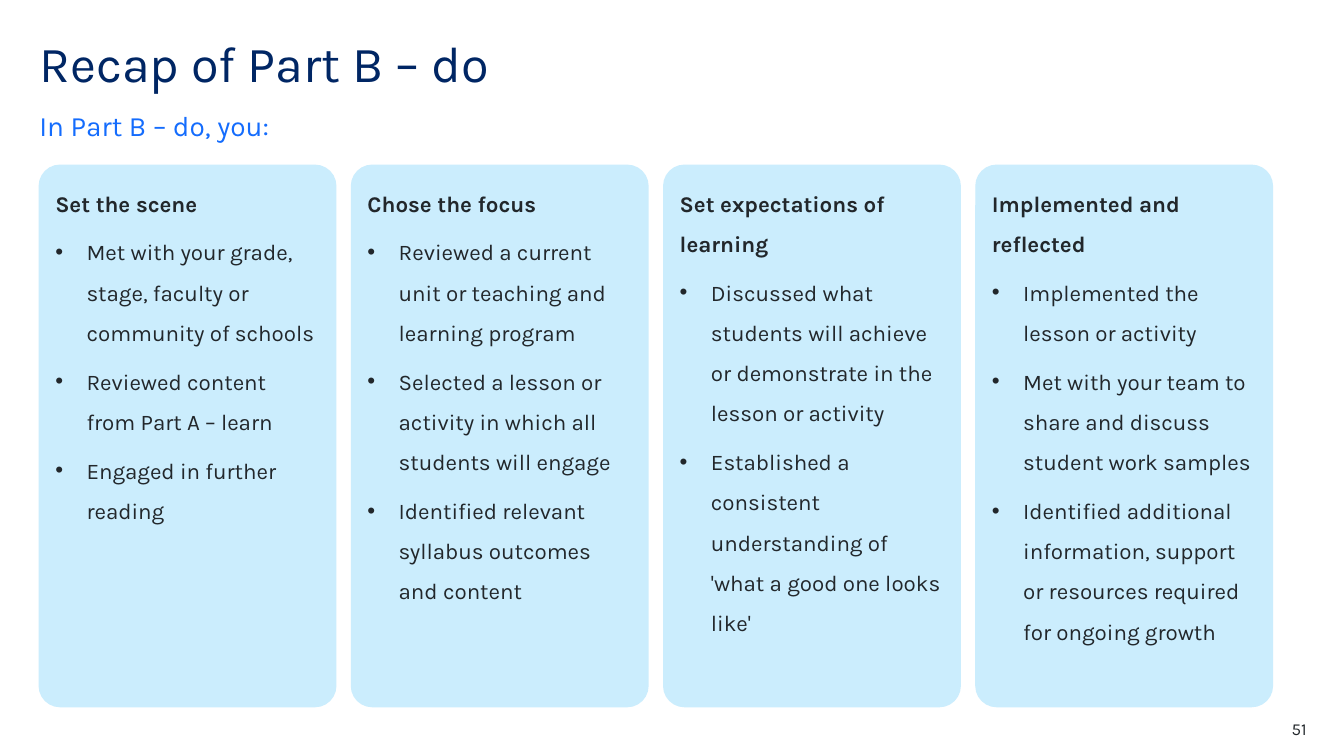
from dataclasses import dataclass

from lxml import etree
from pptx import Presentation
from pptx import util as u
from pptx.dml.color import RGBColor
from pptx.enum import shapes, text
from pptx.oxml import ns

# Content
HEADING = "Recap of Part B – do"
LEAD_IN = "In Part B – do, you:"
PAGE_NUMBER = "51"
STAGES = [
    ("Set the scene", [
        "Met with your grade, stage, faculty or community of schools",
        "Reviewed content from Part A – learn",
        "Engaged in further reading",
    ]),
    ("Chose the focus", [
        "Reviewed a current unit or teaching and learning program",
        "Selected a lesson or activity in which all students will engage",
        "Identified relevant syllabus outcomes and content",
    ]),
    ("Set expectations of learning", [
        "Discussed what students will achieve or demonstrate in the lesson or activity",
        "Established a consistent understanding of 'what a good one looks like'",
    ]),
    ("Implemented and reflected", [
        "Implemented the lesson or activity",
        "Met with your team to share and discuss student work samples",
        "Identified additional information, support or resources required for ongoing growth",
    ]),
]


@dataclass(frozen=True)
class Theme:
    font: str = "Karla"
    navy: str = "002664"
    blue: str = "146CFD"
    ink: str = "22272B"
    card: str = "CBEDFD"
    heading: int = 36
    lead_in: int = 20
    body: int = 16
    footer: int = 12


THEME = Theme()

# Grid, in inches
SLIDE_W, SLIDE_H = 13.33, 7.5
MARGIN = 0.39
HEADER_W = 11.02
CARD_TOP, CARD_W, CARD_H = 1.64, 2.94, 5.37
CARDS_RIGHT = 12.62
CARD_STEP = (CARDS_RIGHT - CARD_W - MARGIN) / (len(STAGES) - 1)
BULLET_INDENT = 0.31


def box(left, top, width, height):
    return [u.Inches(side) for side in (left, top, width, height)]


def style(paragraph, size, color, bold=False):
    font = paragraph.font
    font.name, font.size, font.bold = THEME.font, u.Pt(size), bold
    font.color.rgb = RGBColor.from_string(color)


def prepare(frame, inset=0.0, anchor=text.MSO_ANCHOR.TOP):
    frame.word_wrap = True
    frame.auto_size = text.MSO_AUTO_SIZE.NONE
    frame.vertical_anchor = anchor
    frame.margin_left = frame.margin_right = u.Inches(inset)
    frame.margin_top = frame.margin_bottom = u.Inches(inset / 2)
    return frame.paragraphs[0]


def add_bullet(paragraph):
    props = paragraph._p.get_or_add_pPr()
    props.set("marL", str(u.Inches(BULLET_INDENT)))
    props.set("indent", str(-u.Inches(BULLET_INDENT)))
    etree.SubElement(props, ns.qn("a:buFont")).set("typeface", "Arial")
    etree.SubElement(props, ns.qn("a:buChar")).set("char", "•")


def add_label(slide, wording, place, size, color, anchor=text.MSO_ANCHOR.TOP):
    label = slide.shapes.add_textbox(*box(*place))
    line = prepare(label.text_frame, anchor=anchor)
    line.text = wording
    style(line, size, color)
    return line


def add_card(slide, left, stage, actions):
    card = slide.shapes.add_shape(
        shapes.MSO_SHAPE.ROUNDED_RECTANGLE, *box(left, CARD_TOP, CARD_W, CARD_H))
    card.adjustments[0] = 0.07
    card.shadow.inherit = False
    card.fill.solid()
    card.fill.fore_color.rgb = RGBColor.from_string(THEME.card)
    card.line.color.rgb = RGBColor.from_string(THEME.card)
    card.line.width = u.Pt(1)

    frame = card.text_frame
    prepare(frame, inset=0.1)
    for row, wording in enumerate([stage, *actions]):
        line = frame.add_paragraph() if row else frame.paragraphs[0]
        line.text = wording
        line.alignment = text.PP_ALIGN.LEFT
        line.line_spacing = 1.5
        line.space_after = u.Pt(6)
        if row:
            add_bullet(line)
        style(line, THEME.body, THEME.ink, bold=row == 0)


def main():
    deck = Presentation()
    deck.slide_width, deck.slide_height = u.Inches(SLIDE_W), u.Inches(SLIDE_H)
    slide = deck.slides.add_slide(deck.slide_layouts[5])

    # Heading and lead-in
    heading = slide.shapes.title
    heading.left, heading.top, heading.width, heading.height = box(
        MARGIN, MARGIN, HEADER_W, 0.6)
    line = prepare(heading.text_frame)
    line.text = HEADING
    line.alignment = text.PP_ALIGN.LEFT
    line.line_spacing = 0.9
    style(line, THEME.heading, THEME.navy)

    lead_in = add_label(slide, LEAD_IN, (MARGIN, 1.07, HEADER_W, 0.34),
                        THEME.lead_in, THEME.blue, text.MSO_ANCHOR.BOTTOM)
    lead_in.line_spacing = 1.5
    lead_in.space_after = u.Pt(12)

    # One card per stage
    for column, (stage, actions) in enumerate(STAGES):
        add_card(slide, MARGIN + column * CARD_STEP, stage, actions)

    # Page number
    number = add_label(slide, PAGE_NUMBER, (12.17, 7.13, 0.79, 0.2),
                       THEME.footer, THEME.ink)
    number.alignment = text.PP_ALIGN.RIGHT

    deck.save("out.pptx")


if __name__ == "__main__":
    main()
